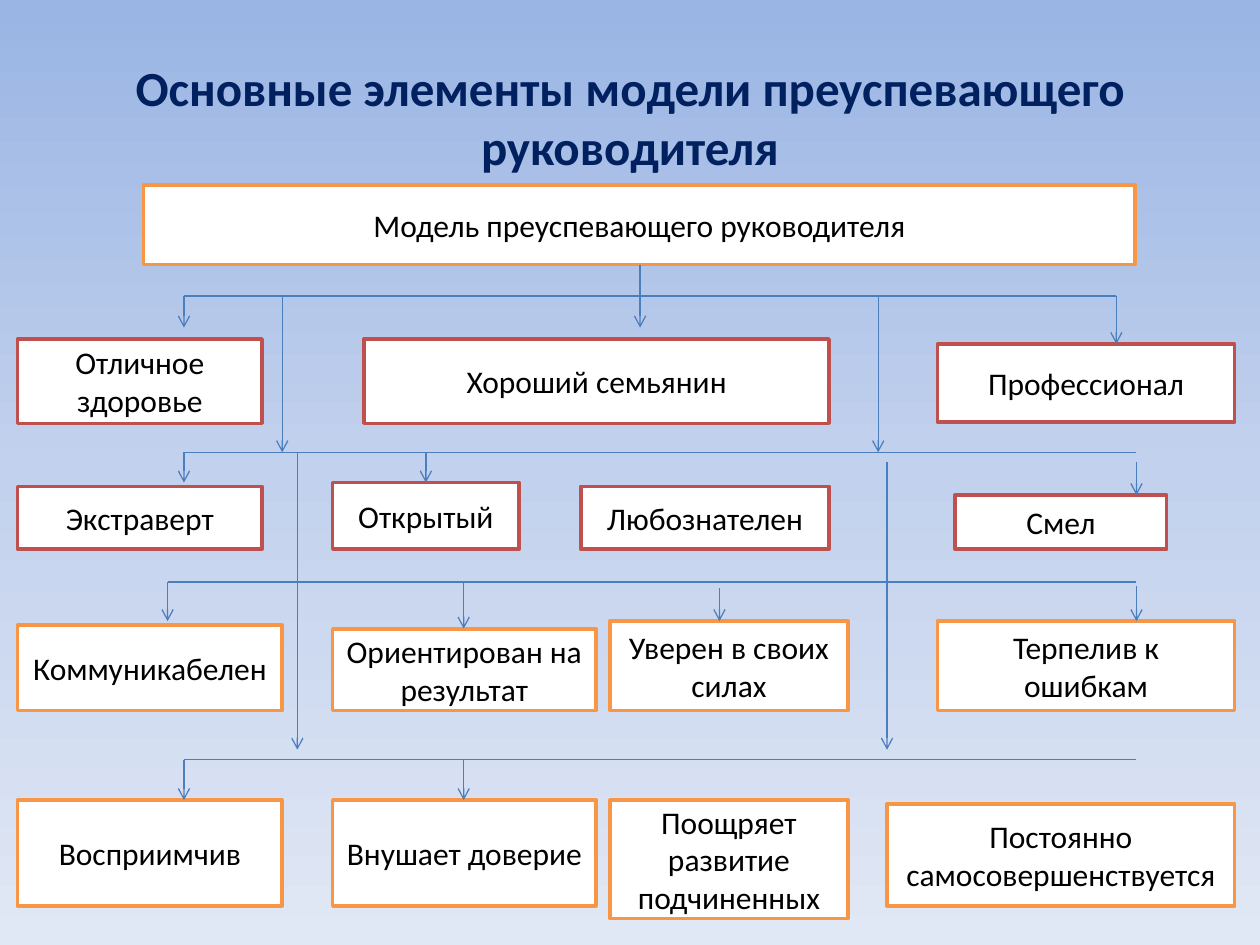
import copy
import pptx
import pptx.util
import pptx.dml.color
import pptx.enum.shapes
import pptx.enum.text
import pptx.oxml
import pptx.oxml.ns

COLS, ROWS = 100, 75
WIDTH, HEIGHT = pptx.util.Inches(10), pptx.util.Inches(7.5)

THEME = {
    "sky": ["9AB5E4", "C2D1ED", "E1E8F5"],
    "box": "FFFFFF",
    "red": "C0504D",
    "gold": "F79646",
    "wire": "4B7EBC",
    "head": {"name": "Calibri", "size": pptx.util.Pt(28), "bold": True, "ink": "002060"},
    "body": {"name": "Calibri", "size": pptx.util.Pt(18), "bold": False, "ink": "000000"},
    "edge": pptx.util.Pt(2),
    "thin": pptx.util.Pt(0.75),
}

TITLE = ("Основные элементы модели преуспевающего руководителя", 5, 3, 90, 12.5)

TIERS = [
    ("gold", [("Модель преуспевающего руководителя", 11.4, 14.7, 78.7, 6.3)]),
    ("red", [
        ("Отличное здоровье", 1.4, 26.9, 19.4, 6.7),
        ("Хороший семьянин", 28.9, 26.9, 36.9, 6.7),
        ("Профессионал", 74.4, 27.3, 23.6, 6.2),
    ]),
    ("red", [
        ("Экстраверт", 1.4, 38.6, 19.4, 5),
        ("Открытый", 26.4, 38.3, 14.8, 5.3),
        ("Любознателен", 46.1, 38.6, 19.7, 5),
        ("Смел", 75.8, 39.3, 16.8, 4.3),
    ]),
    ("gold", [
        ("Коммуникабелен", 1.4, 49.6, 21, 6.8),
        ("Ориентирован на результат", 26.4, 49.9, 20.9, 6.5),
        ("Уверен в своих силах", 48.4, 49.3, 18.9, 7.1),
        ("Терпелив к ошибкам", 74.4, 49.3, 23.6, 7.1),
    ]),
    ("gold", [
        ("Восприимчив", 1.4, 63.5, 21, 8.4),
        ("Внушает доверие", 26.4, 63.5, 20.9, 8.4),
        ("Поощряет развитие подчиненных", 48.4, 63.5, 18.9, 9.4),
        ("Постоянно самосовершенствуется", 70.4, 63.8, 27.6, 8.1),
    ]),
]

RAILS = [(14.6, 88.6, 23.5), (14.6, 90.2, 35.9), (13.3, 90.2, 46.2), (14.6, 90.2, 60.3)]

DROPS = [
    (50.8, 21, 26), (14.6, 23.5, 26), (88.6, 23.5, 27.3),
    (22.4, 23.5, 35.9), (69.7, 23.5, 35.9),
    (14.6, 35.9, 38.3), (33.8, 35.9, 38.3), (90.2, 36.7, 39.3),
    (23.6, 35.9, 59.5), (70.4, 36.7, 59.5),
    (13.3, 46.2, 49.3), (36.8, 46.2, 49.9), (57.1, 46.7, 49.3), (90.2, 46.5, 49.3),
    (14.6, 60.3, 63.5), (36.8, 60.3, 63.5),
]


def tint(code):
    """Turn a hex code into a colour."""
    return pptx.dml.color.RGBColor.from_string(code)


def place(col, row):
    """Turn a grid column and row into slide lengths."""
    return round(WIDTH * col / COLS), round(HEIGHT * row / ROWS)


def paint(slide):
    """Fill the background with a downward gradient."""
    fill = slide.background.fill
    fill.gradient()
    fill.gradient_angle = 270
    first = next(slide.element.iter(pptx.oxml.ns.qn("a:gs")))
    first.addnext(copy.deepcopy(first))
    for num, (stop, code) in enumerate(zip(fill.gradient_stops, THEME["sky"])):
        stop.position = num / 2
        stop.color.rgb = tint(code)


def write(shape, text, style):
    """Write centred, wrapped text in one of the theme's styles."""
    frame = shape.text_frame
    frame.word_wrap = True
    frame.vertical_anchor = pptx.enum.text.MSO_ANCHOR.MIDDLE
    para = frame.paragraphs[0]
    para.alignment = pptx.enum.text.PP_ALIGN.CENTER
    run = para.add_run()
    run.text = text
    for key, value in THEME[style].items():
        if key == "ink":
            run.font.color.rgb = tint(value)
        else:
            setattr(run.font, key, value)


def head(slide, text, left, top, wide, high):
    """Add the slide's title."""
    shape = slide.shapes.add_textbox(*place(left, top), *place(wide, high))
    write(shape, text, "head")


def box(slide, edge, text, left, top, wide, high):
    """Add a white box with a coloured edge."""
    kind = pptx.enum.shapes.MSO_SHAPE.RECTANGLE
    shape = slide.shapes.add_shape(kind, *place(left, top), *place(wide, high))
    shape.shadow.inherit = False
    shape.fill.solid()
    shape.fill.fore_color.rgb = tint(THEME["box"])
    shape.line.color.rgb = tint(THEME[edge])
    shape.line.width = THEME["edge"]
    write(shape, text, "body")


def wire(slide, start, end, arrow=False):
    """Add a thin line, with an arrowhead at its end if asked."""
    kind = pptx.enum.shapes.MSO_CONNECTOR.STRAIGHT
    line = slide.shapes.add_connector(kind, *place(*start), *place(*end))
    line.line.color.rgb = tint(THEME["wire"])
    line.line.width = THEME["thin"]
    if arrow:
        tip = pptx.oxml.parse_xml(f'<a:tailEnd {pptx.oxml.ns.nsdecls("a")} type="arrow"/>')
        line.line._get_or_add_ln().append(tip)
    bare = pptx.oxml.parse_xml(f'<a:effectLst {pptx.oxml.ns.nsdecls("a")}/>')
    line.element.spPr.append(bare)


def main():
    """Build the slide and save it."""
    deck = pptx.Presentation()
    for key, value in {"slide_width": WIDTH, "slide_height": HEIGHT}.items():
        setattr(deck, key, value)
    slide = deck.slides.add_slide(deck.slide_layouts[6])
    paint(slide)
    head(slide, *TITLE)
    for edge, items in TIERS:
        for item in items:
            box(slide, edge, *item)
    for left, right, row in RAILS:
        wire(slide, (left, row), (right, row))
    for col, top, end in DROPS:
        wire(slide, (col, top), (col, end), arrow=True)
    deck.save("out.pptx")


if __name__ == "__main__":
    main()
